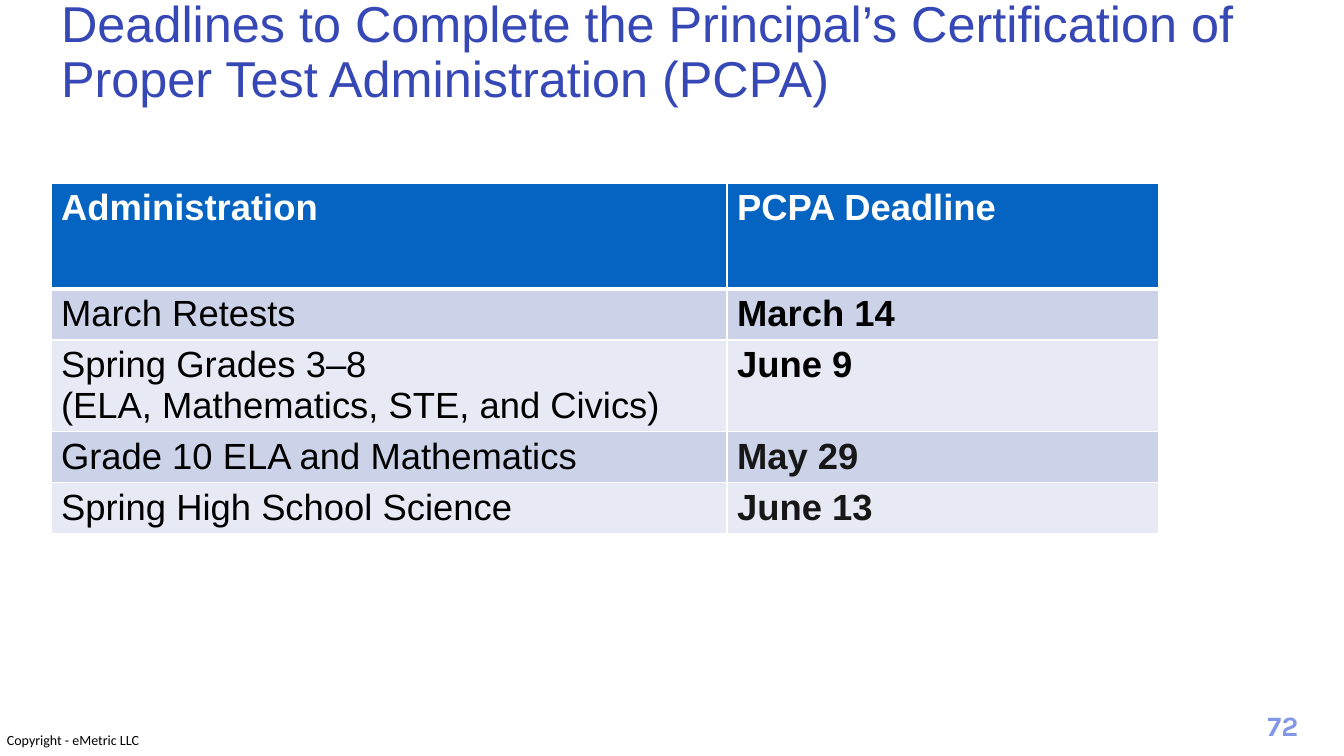
from lxml import etree
from pptx import Presentation
from pptx.dml.color import RGBColor
from pptx.enum.text import MSO_ANCHOR, MSO_AUTO_SIZE, PP_ALIGN
from pptx.oxml.ns import qn
from pptx.util import Emu, Pt

BOTTOM = MSO_ANCHOR.BOTTOM
NO_FIT = MSO_AUTO_SIZE.NONE
LEFT, CENTER = PP_ALIGN.LEFT, PP_ALIGN.CENTER

WHITE = RGBColor(0xFF, 0xFF, 0xFF)
BLACK = RGBColor(0x00, 0x00, 0x00)
INK = RGBColor(0x18, 0x17, 0x17)
TITLE_BLUE = RGBColor(0x36, 0x47, 0xB6)
NUMBER_BLUE = RGBColor(0x83, 0x97, 0xE7)
HEADER_BLUE = RGBColor(0x05, 0x63, 0xC1)
BAND_DARK = RGBColor(0xCC, 0xD3, 0xE9)
BAND_LIGHT = RGBColor(0xE7, 0xEA, 0xF4)


def px(n):
    return Emu(round(n * 914400 / 100.8))


def style(paragraph, name, size, color, bold=False):
    font = paragraph.font
    font.name, font.size, font.bold = name, Pt(size), bold
    font.color.rgb = color


prs = Presentation()
prs.slide_width, prs.slide_height = px(1344), px(756)
slide = prs.slides.add_slide(prs.slide_layouts[5])

# Title
title = slide.shapes.title
title.left, title.top, title.width, title.height = px(51), px(24), px(1212), px(89)
title_frame = title.text_frame
title_frame.text = ("Deadlines to Complete the Principal’s Certification of "
                    "Proper Test Administration (PCPA)")
title_frame.auto_size = NO_FIT
title_frame.vertical_anchor = BOTTOM
heading = title_frame.paragraphs[0]
heading.alignment = LEFT
heading.line_spacing = 0.9
style(heading, "Arial", 36, TITLE_BLUE)

# Deadline table: administration, deadline, deadline colour, row height
DEADLINES = [
    ("Administration", "PCPA Deadline", WHITE, 106),
    ("March Retests", "March 14", BLACK, 51),
    ("Spring Grades 3–8\v(ELA, Mathematics, STE, and Civics)", "June 9", BLACK, 91),
    ("Grade 10 ELA and Mathematics", "May 29", INK, 51),
    ("Spring High School Science", "June 13", INK, 51),
]
COLUMN_WIDTHS = (676, 432)

table = slide.shapes.add_table(
    len(DEADLINES), len(COLUMN_WIDTHS), px(51), px(183),
    px(sum(COLUMN_WIDTHS)), px(sum(row[3] for row in DEADLINES))).table
for column, width in zip(table.columns, COLUMN_WIDTHS):
    column.width = px(width)

for r, (administration, deadline, deadline_color, height) in enumerate(DEADLINES):
    table.rows[r].height = px(height)
    is_header = r == 0
    band = HEADER_BLUE if is_header else BAND_DARK if r % 2 else BAND_LIGHT
    label_color = WHITE if is_header else BLACK
    entries = ((administration, label_color, is_header), (deadline, deadline_color, True))
    for c, (text, color, bold) in enumerate(entries):
        cell = table.cell(r, c)
        cell.text = text
        style(cell.text_frame.paragraphs[0], "Arial", 26, color, bold)
        cell.fill.solid()
        cell.fill.fore_color.rgb = band

        # White rules, thicker below the header
        sides = (("a:lnL", 1), ("a:lnR", 1),
                 ("a:lnT", 3 if r == 1 else 1), ("a:lnB", 3 if is_header else 1))
        properties = cell._tc.get_or_add_tcPr()
        for position, (side, weight) in enumerate(sides):
            rule = etree.Element(qn(side), w=str(Pt(weight)))
            paint = etree.SubElement(rule, qn("a:solidFill"))
            etree.SubElement(paint, qn("a:srgbClr"), val=str(WHITE))
            properties.insert(position, rule)

# Copyright line
copyright_frame = slide.shapes.add_textbox(px(7), px(732), px(136), px(17)).text_frame
copyright_frame.margin_left = copyright_frame.margin_right = 0
copyright_frame.margin_top = copyright_frame.margin_bottom = 0
copyright_frame.text = "Copyright - eMetric LLC"
style(copyright_frame.paragraphs[0], "Calibri", 10, BLACK)

# Page number
number_frame = slide.shapes.add_textbox(px(1252), px(704), px(62), px(44)).text_frame
number_frame.word_wrap = True
number_frame.text = "72"
number_frame.paragraphs[0].alignment = CENTER
style(number_frame.paragraphs[0], "Karla", 20, NUMBER_BLUE, True)

prs.save("out.pptx")
